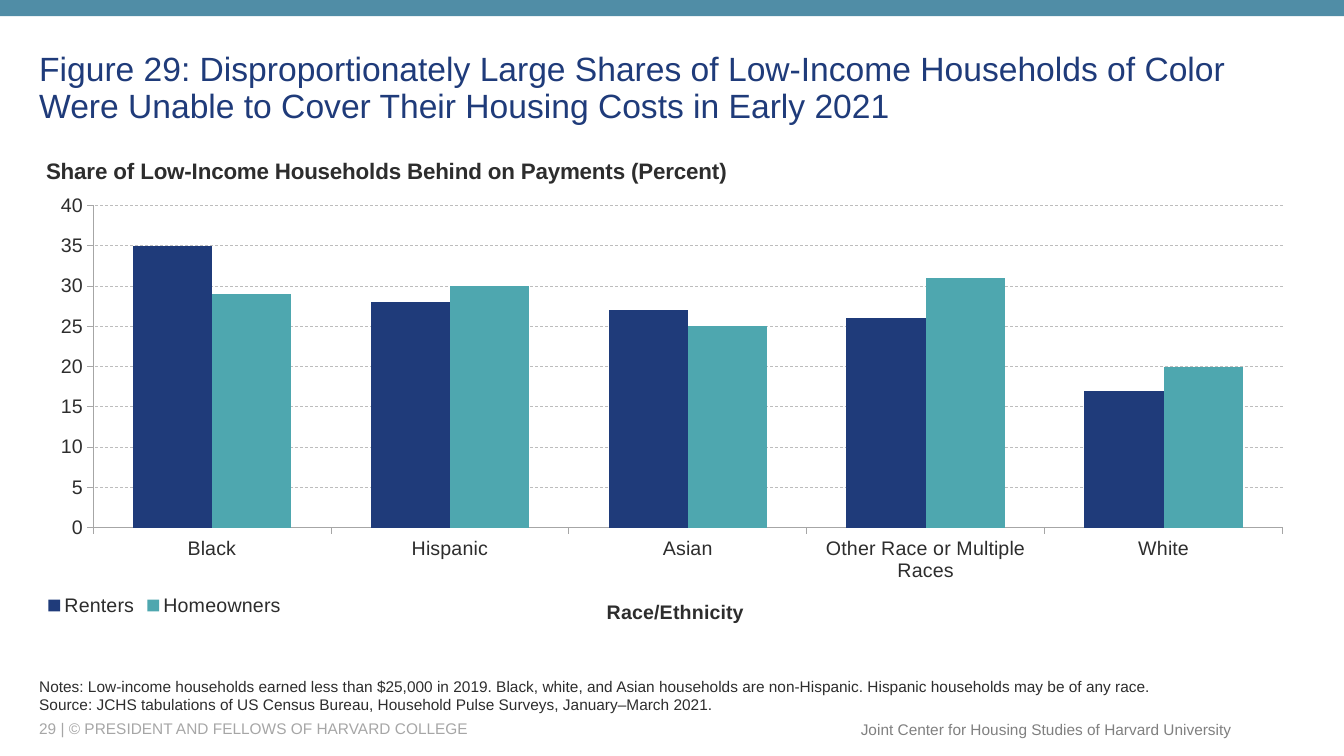
import dataclasses
import typing

import lxml.etree
import pptx
import pptx.chart.chart
import pptx.chart.data
import pptx.dml.color
import pptx.enum.chart
import pptx.enum.dml
import pptx.enum.shapes
import pptx.enum.text
import pptx.oxml.ns
import pptx.slide
import pptx.util

Pt = pptx.util.Pt
ANCHOR = pptx.enum.text.MSO_ANCHOR
ALIGN = pptx.enum.text.PP_ALIGN

FONT = "Arial"
COLORS = {
    "band": "508DA6",
    "navy": "1F3B7A",
    "teal": "4EA7AF",
    "ink": "2D2D2D",
    "copyright": "A6A6A6",
    "center": "808080",
    "axis": "A6A6A6",
    "grid": "BDBDBD",
}


@dataclasses.dataclass(frozen=True)
class TextBlock:
    left: float
    top: float
    width: float
    height: float
    lines: tuple[str, ...]
    color: str
    size: float = 11
    anchor: ANCHOR = ANCHOR.MIDDLE
    align: ALIGN = ALIGN.LEFT
    spacing: float = 1.0
    wrap: bool = True


@dataclasses.dataclass(frozen=True)
class Tenure:
    name: str
    shares: tuple[int, ...]
    color: str


MARGIN = 20.88
BLOCKS = (
    TextBlock(MARGIN, 513.36, 570.24, 14.4,
              ("29 | © PRESIDENT AND FELLOWS OF HARVARD COLLEGE",), "copyright"),
    TextBlock(606.24, 510.48, 280.8, 20.88,
              ("Joint Center for Housing Studies of Harvard University",),
              "center", align=ALIGN.RIGHT, wrap=False),
    TextBlock(MARGIN, 28.8, 910.8, 69.84,
              ("Figure 29: Disproportionately Large Shares of Low-Income Households "
               "of Color Were Unable to Cover Their Housing Costs in Early 2021",),
              "navy", size=24, spacing=0.9),
    TextBlock(MARGIN, 460.8, 846, 52.56,
              ("Notes: Low-income households earned less than $25,000 in 2019. Black, "
               "white, and Asian households are non-Hispanic. Hispanic households may "
               "be of any race.",
               "Source: JCHS tabulations of US Census Bureau, Household Pulse Surveys, "
               "January–March 2021."),
              "ink", anchor=ANCHOR.BOTTOM),
)
RACES = ("Black", "Hispanic", "Asian", "Other Race or Multiple Races", "White")
TENURES = (
    Tenure("Renters", (35, 28, 27, 26, 17), "navy"),
    Tenure("Homeowners", (29, 30, 25, 31, 20), "teal"),
)


def rgb(name: str) -> pptx.dml.color.RGBColor:
    return pptx.dml.color.RGBColor.from_string(COLORS[name])


def style_font(font: typing.Any, *, size: float, color: str, bold: bool = False) -> None:
    font.name = FONT
    font.size = Pt(size)
    font.bold = bold
    font.color.rgb = rgb(color)


def write(paragraph: typing.Any, text: str, *, size: float, color: str,
          bold: bool = False, align: ALIGN = ALIGN.LEFT, spacing: float = 1.0) -> None:
    paragraph.alignment = align
    paragraph.line_spacing = spacing
    run = paragraph.add_run()
    run.text = text
    style_font(run.font, size=size, color=color, bold=bold)


def add_block(slide: pptx.slide.Slide, block: TextBlock) -> None:
    frame = slide.shapes.add_textbox(
        Pt(block.left), Pt(block.top), Pt(block.width), Pt(block.height)).text_frame
    frame.word_wrap = block.wrap
    frame.vertical_anchor = block.anchor
    for index, line in enumerate(block.lines):
        paragraph = frame.add_paragraph() if index else frame.paragraphs[0]
        write(paragraph, line, size=block.size, color=block.color,
              align=block.align, spacing=block.spacing)


def set_layout(chart: pptx.chart.chart.Chart, part: str, index: int,
               **fractions: float) -> None:
    qn = pptx.oxml.ns.qn
    parent = chart.element.xpath(part)[0]
    for former in parent.findall(qn("c:layout")):
        parent.remove(former)
    layout = lxml.etree.Element(qn("c:layout"))
    manual = lxml.etree.SubElement(layout, qn("c:manualLayout"))
    settings: dict[str, typing.Any] = {"xMode": "edge", "yMode": "edge", **fractions}
    if "w" in fractions:
        settings = {"layoutTarget": "inner", **settings}
    for tag, value in settings.items():
        lxml.etree.SubElement(manual, qn(f"c:{tag}")).set("val", str(value))
    parent.insert(index, layout)


def style_line(line: typing.Any, color: str) -> None:
    line.color.rgb = rgb(color)
    line.width = Pt(0.5)


def add_share_chart(slide: pptx.slide.Slide) -> None:
    shares = pptx.chart.data.CategoryChartData()
    shares.categories = RACES
    for tenure in TENURES:
        shares.add_series(tenure.name, tenure.shares)
    chart = slide.shapes.add_chart(
        pptx.enum.chart.XL_CHART_TYPE.COLUMN_CLUSTERED,
        Pt(MARGIN), Pt(98.64), Pt(910.8), Pt(351.36), shares).chart
    style_font(chart.font, size=14, color="ink")

    columns = chart.plots[0]
    columns.vary_by_categories = False
    columns.gap_width = 100
    columns.overlap = 0
    for series, tenure in zip(columns.series, TENURES):
        series.format.fill.solid()
        series.format.fill.fore_color.rgb = rgb(tenure.color)

    race_axis, share_axis = chart.category_axis, chart.value_axis
    for axis in (race_axis, share_axis):
        axis.major_tick_mark = pptx.enum.chart.XL_TICK_MARK.OUTSIDE
        axis.minor_tick_mark = pptx.enum.chart.XL_TICK_MARK.NONE
        style_font(axis.tick_labels.font, size=14, color="ink")
        style_line(axis.format.line, "axis")
    share_axis.minimum_scale = 0
    share_axis.maximum_scale = 40
    share_axis.major_unit = 5
    share_axis.has_major_gridlines = True
    gridline = share_axis.major_gridlines.format.line
    style_line(gridline, "grid")
    gridline.dash_style = pptx.enum.dml.MSO_LINE.DASH

    write(chart.chart_title.text_frame.paragraphs[0],
          "Share of Low-Income Households Behind on Payments (Percent)",
          size=16, color="ink", bold=True)
    write(race_axis.axis_title.text_frame.paragraphs[0], "Race/Ethnicity",
          size=14, color="ink", bold=True, align=ALIGN.CENTER)
    chart.has_legend = True
    chart.legend.position = pptx.enum.chart.XL_LEGEND_POSITION.BOTTOM
    chart.legend.include_in_layout = False
    style_font(chart.legend.font, size=14, color="ink")

    set_layout(chart, "c:chart/c:title", 1, x=0.01, y=0.03)
    set_layout(chart, "c:chart/c:plotArea", 0, x=0.05, y=0.137, w=0.933, h=0.655)
    set_layout(chart, "c:chart/c:plotArea/c:catAx/c:title", 1, x=0.45, y=0.93)
    set_layout(chart, "c:chart/c:legend", 1, x=0.01, y=0.92)


def main() -> None:
    deck = pptx.Presentation()
    deck.slide_width, deck.slide_height = Pt(960), Pt(540)
    slide = deck.slides.add_slide(deck.slide_layouts[6])
    band = slide.shapes.add_shape(
        pptx.enum.shapes.MSO_SHAPE.RECTANGLE, 0, 0, deck.slide_width, Pt(11.5))
    band.shadow.inherit = False
    band.fill.solid()
    band.fill.fore_color.rgb = rgb("band")
    band.line.fill.background()
    add_share_chart(slide)
    for block in BLOCKS:
        add_block(slide, block)
    deck.save("out.pptx")


if __name__ == "__main__":
    main()
